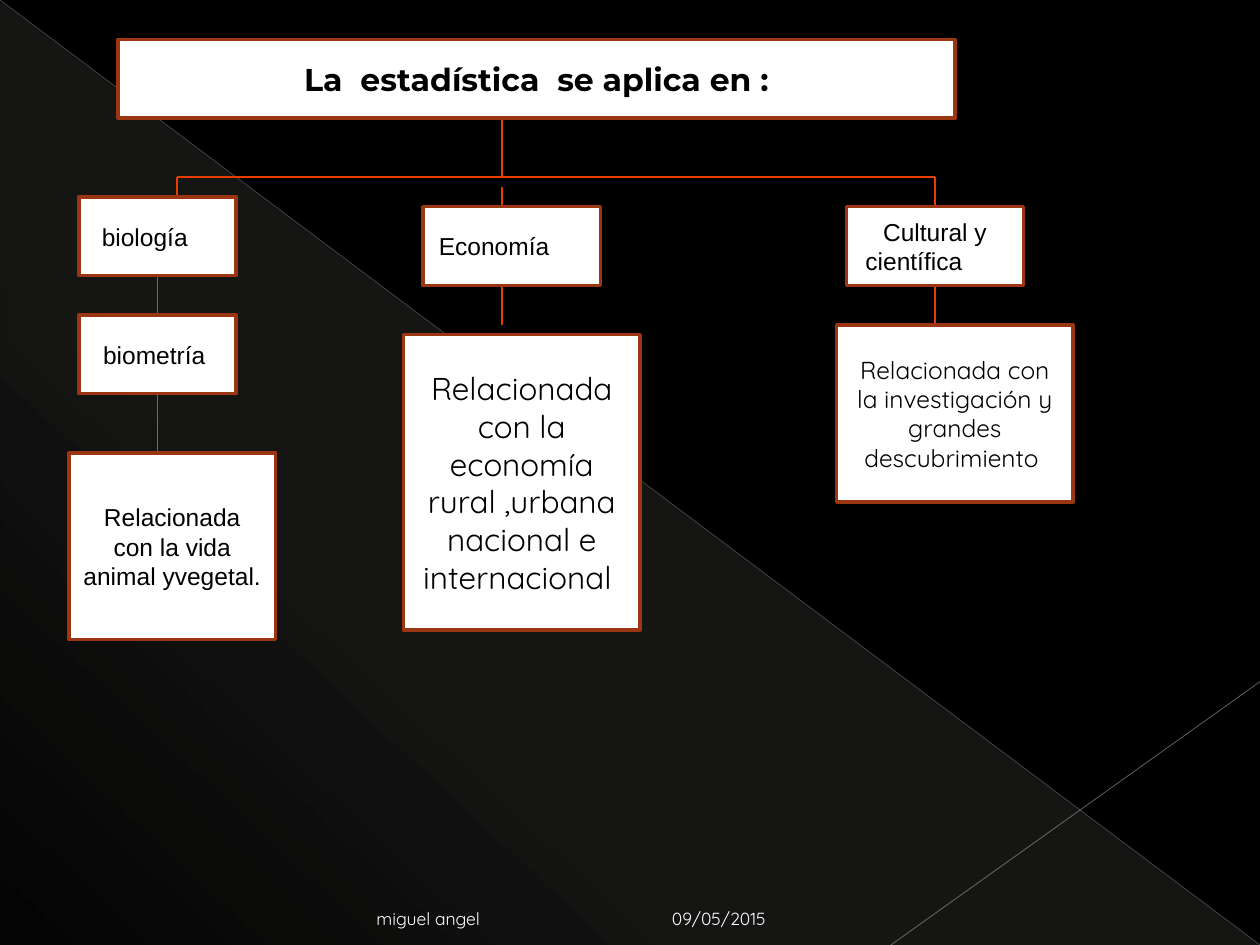
from dataclasses import dataclass
from typing import NamedTuple

from lxml import etree
from pptx import Presentation
from pptx import util as u
from pptx.dml.color import RGBColor
from pptx.enum import shapes, text
from pptx.oxml import parse_xml
from pptx.oxml.ns import nsdecls, qn

COLS = 128
WIDTH, HEIGHT = u.Inches(10), u.Inches(7.5)
CELL = WIDTH / COLS
ROWS = HEIGHT / CELL


@dataclass(frozen=True)
class Theme:
    back: str = "000000"
    paper: str = "FFFFFF"
    ink: str = "000000"
    border: str = "9C3511"
    branch: str = "E63F04"
    veil: str = "E9E5DC"
    diagonal: str = "C1BEBE"
    corner: str = "C7C5C5"
    title_font: str = "Montserrat"
    label_font: str = "Arial"
    body_font: str = "Quicksand"
    big: float = 18
    normal: float = 14
    small: float = 10
    border_width: float = 2
    branch_width: float = 0.75


T = Theme()


class Box(NamedTuple):
    words: str
    col: float
    row: float
    cols: float
    rows: float
    font: str = T.label_font
    size: float = T.normal
    bold: bool = False
    left: float = 0.1
    right: float = 0.1
    align: text.PP_ALIGN = text.PP_ALIGN.CENTER
    indent: float = 0


class Line(NamedTuple):
    col1: float
    row1: float
    col2: float
    row2: float
    color: str = T.branch
    width: float = T.branch_width
    opacity: int = 100


class Footer(NamedTuple):
    words: str
    col: float
    cols: float
    align: text.PP_ALIGN


BACKDROP = [
    Line(0, 0, COLS, ROWS, T.diagonal, 0.39, 35),
    Line(COLS, 69.25, 90.5, ROWS, T.corner, 0.47, 45),
]
BRANCHES = [
    Line(51, 12, 51, 18),
    Line(18, 18, 95, 18),
    Line(18, 18, 18, 20),
    Line(51, 19, 51, 22),
    Line(95, 18, 95, 21),
    Line(16, 28, 16, 33),
    Line(16, 40, 16, 46),
    Line(51, 29, 51, 33),
    Line(95, 29, 95, 33),
]
BOXES = [
    Box("La  estadística  se aplica en :", 12, 4, 85, 8, T.title_font, T.big, True),
    Box("biología", 8, 20, 16, 8, right=0.3),
    Box("biometría", 8, 32, 16, 8, right=0.15),
    Box("Relacionada con la vida animal yvegetal.", 7, 46, 21, 19),
    Box("Economía", 43, 21, 18, 8, right=0.38),
    Box("Relacionada con la economía rural ,urbana nacional e internacional ",
        41, 34, 24, 30, T.body_font, T.big),
    Box("Cultural y científica", 86, 21, 18, 8, left=0.15,
        align=text.PP_ALIGN.LEFT, indent=0.14),
    Box("Relacionada con la investigación y grandes descubrimiento ",
        85, 33, 24, 18, T.body_font),
]
FOOTERS = [
    Footer("09/05/2015", 67, 30, text.PP_ALIGN.LEFT),
    Footer("miguel angel", 6.5, 43.5, text.PP_ALIGN.RIGHT),
]


def cells(*counts: float) -> list[u.Emu]:
    return [u.Emu(round(n * CELL)) for n in counts]


def rgb(color: str) -> RGBColor:
    return RGBColor.from_string(color)


def apply(target, formats: dict) -> None:
    for name, value in formats.items():
        setattr(target, name, value)


def write(tf, words: str, font: str, size: float, color: str, align: text.PP_ALIGN,
          anchor: text.MSO_ANCHOR, bold: bool = False,
          left: float = 0.1, right: float = 0.1, indent: float = 0) -> None:
    apply(tf, {"word_wrap": True, "vertical_anchor": anchor,
               "margin_left": u.Inches(left), "margin_right": u.Inches(right)})
    p = tf.paragraphs[0]
    p.alignment = align
    if indent:
        p._p.get_or_add_pPr().set("indent", str(u.Inches(indent)))
    r = p.add_run()
    r.text = words
    apply(r.font, {"name": font, "size": u.Pt(size), "bold": bold})
    r.font.color.rgb = rgb(color)


def draw_line(s, line: Line) -> None:
    sp = s.shapes.add_connector(
        shapes.MSO_CONNECTOR.STRAIGHT,
        *cells(line.col1, line.row1, line.col2, line.row2))
    sp.line.width = u.Pt(line.width)
    sp.line.color.rgb = rgb(line.color)
    if line.opacity < 100:
        clr = sp.line._ln.find(".//" + qn("a:srgbClr"))
        etree.SubElement(clr, qn("a:alpha")).set("val", str(line.opacity * 1000))
    etree.SubElement(sp._element.spPr, qn("a:effectLst"))


def draw_box(s, box: Box) -> None:
    sp = s.shapes.add_shape(shapes.MSO_SHAPE.RECTANGLE,
                            *cells(box.col, box.row, box.cols, box.rows))
    sp.shadow.inherit = False
    sp.fill.solid()
    sp.fill.fore_color.rgb = rgb(T.paper)
    sp.line.color.rgb = rgb(T.border)
    sp.line.width = u.Pt(T.border_width)
    write(sp.text_frame, box.words, box.font, box.size, T.ink, box.align,
          text.MSO_ANCHOR.MIDDLE, box.bold, box.left, box.right, box.indent)


def draw_footer(s, footer: Footer) -> None:
    sp = s.shapes.add_textbox(*cells(footer.col, 90.75, footer.cols, 4.25))
    write(sp.text_frame, footer.words, T.body_font, T.small, T.paper,
          footer.align, text.MSO_ANCHOR.BOTTOM)


def draw_veil(s) -> None:
    sp = s.shapes.add_shape(shapes.MSO_SHAPE.RIGHT_TRIANGLE, *cells(0, 0, COLS, ROWS))
    sp.shadow.inherit = False
    sp.line.fill.background()
    stops = "".join(
        f'<a:gs pos="{pos * 1000}"><a:srgbClr val="{T.veil}">'
        f'<a:alpha val="{alpha * 1000}"/></a:srgbClr></a:gs>'
        for pos, alpha in ((0, 10), (70, 8), (100, 1)))
    grad = parse_xml(f'<a:gradFill {nsdecls("a")}><a:gsLst>{stops}</a:gsLst>'
                     f'<a:lin ang="{133 * 60000}" scaled="0"/></a:gradFill>')
    sp._element.spPr.find(qn("a:prstGeom")).addnext(grad)


def main() -> None:
    prs = Presentation()
    apply(prs, {"slide_width": WIDTH, "slide_height": HEIGHT})
    s = prs.slides.add_slide(prs.slide_layouts[6])
    s.background.fill.solid()
    s.background.fill.fore_color.rgb = rgb(T.back)
    draw_veil(s)
    for line in BACKDROP + BRANCHES:
        draw_line(s, line)
    for box in BOXES:
        draw_box(s, box)
    for footer in FOOTERS:
        draw_footer(s, footer)
    prs.save("out.pptx")


if __name__ == "__main__":
    main()
